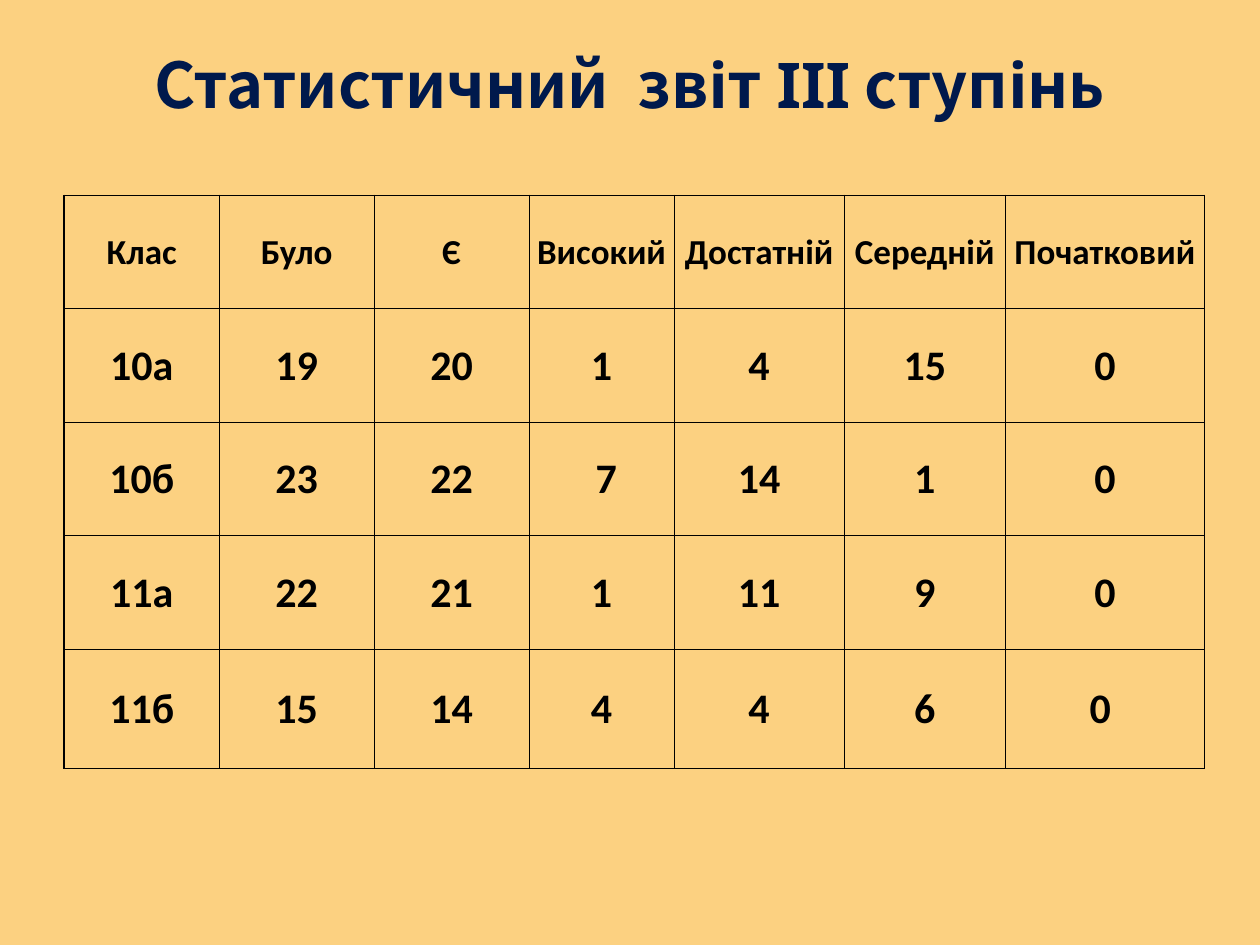
import pptx
import pptx.util
import pptx.dml.color
import pptx.enum.text
import pptx.oxml.ns
from lxml import etree

Inches, Pt = pptx.util.Inches, pptx.util.Pt
COLORS = {"background": "FCD181", "title": "00194C", "ink": "000000"}
COL_WIDTHS = [1.23, 1.23, 1.23, 1.15, 1.35, 1.28, 1.58]
ROW_HEIGHTS = [0.9, 0.9, 0.9, 0.9, 0.95]
ROWS = [
    ["Клас", "Було", "Є", "Високий", "Достатній", "Середній", "Початковий"],
    ["10а", "19", "20", "1", "4", "15", "0"],
    ["10б", "23", "22", " 7", "14", "1", "0"],
    ["11а", "22", "21", "1", "11", "9", "0"],
    ["11б", "15", "14", "4", "4", "6", "0 "],
]


def rgb(name):
    return pptx.dml.color.RGBColor.from_string(COLORS[name])


def add_text(tf, text, size, font, color):
    """Write one bold, centred line."""
    p = tf.paragraphs[0]
    p.alignment = pptx.enum.text.PP_ALIGN.CENTER
    r = p.add_run()
    r.text = text
    r.font.size, r.font.bold, r.font.name = Pt(size), True, font
    r.font.color.rgb = rgb(color)
    # Cyrillic may be drawn with the East Asian face
    etree.SubElement(r.font._element, pptx.oxml.ns.qn("a:ea"), typeface=font)


def add_title(s, text):
    sp = s.shapes.add_textbox(Inches(0), Inches(0.25), Inches(10), Inches(0.83))
    tf = sp.text_frame
    tf.word_wrap = True
    tf.vertical_anchor = pptx.enum.text.MSO_ANCHOR.MIDDLE
    add_text(tf, text, 36, "Noto Sans CJK KR", "title")


def set_borders(cell, widths):
    """Put the border lines, in points per side, ahead of the cell's fill."""
    qn = pptx.oxml.ns.qn
    tcPr = cell._tc.get_or_add_tcPr()
    for i, (side, width) in enumerate(widths.items()):
        ln = etree.Element(qn("a:ln" + side), w=str(Pt(width)))
        fill = etree.SubElement(ln, qn("a:solidFill"))
        etree.SubElement(fill, qn("a:srgbClr"), val=COLORS["ink"])
        tcPr.insert(i, ln)


def add_grades_table(s):
    last_row, last_col = len(ROWS) - 1, len(COL_WIDTHS) - 1
    table = s.shapes.add_table(
        len(ROWS), len(COL_WIDTHS), Inches(0.51), Inches(1.55),
        Inches(sum(COL_WIDTHS)), Inches(sum(ROW_HEIGHTS))).table
    table.first_row = table.horz_banding = False
    for column, width in zip(table.columns, COL_WIDTHS):
        column.width = Inches(width)
    for row, height in zip(table.rows, ROW_HEIGHTS):
        row.height = Inches(height)

    for i, texts in enumerate(ROWS):
        for j, text in enumerate(texts):
            cell = table.cell(i, j)
            cell.margin_left = cell.margin_right = cell.margin_top = Inches(0.01)
            cell.margin_bottom = 0
            cell.vertical_anchor = pptx.enum.text.MSO_ANCHOR.MIDDLE
            cell.fill.background()
            add_text(cell.text_frame, text, 20 if i == 0 else 24, "Calibri", "ink")
            # Outer edges are heavier than inner ones
            outer = {"L": j == 0, "R": j == last_col, "T": i == 0, "B": i == last_row}
            set_borders(cell, {side: 1 if edge else 0.5 for side, edge in outer.items()})


def main():
    prs = pptx.Presentation()
    prs.slide_width, prs.slide_height = Inches(10), Inches(7.5)
    s = prs.slides.add_slide(prs.slide_layouts[6])
    s.background.fill.solid()
    s.background.fill.fore_color.rgb = rgb("background")
    add_title(s, "Статистичний  звіт ІІІ ступінь")
    add_grades_table(s)
    prs.save("out.pptx")


if __name__ == "__main__":
    main()
